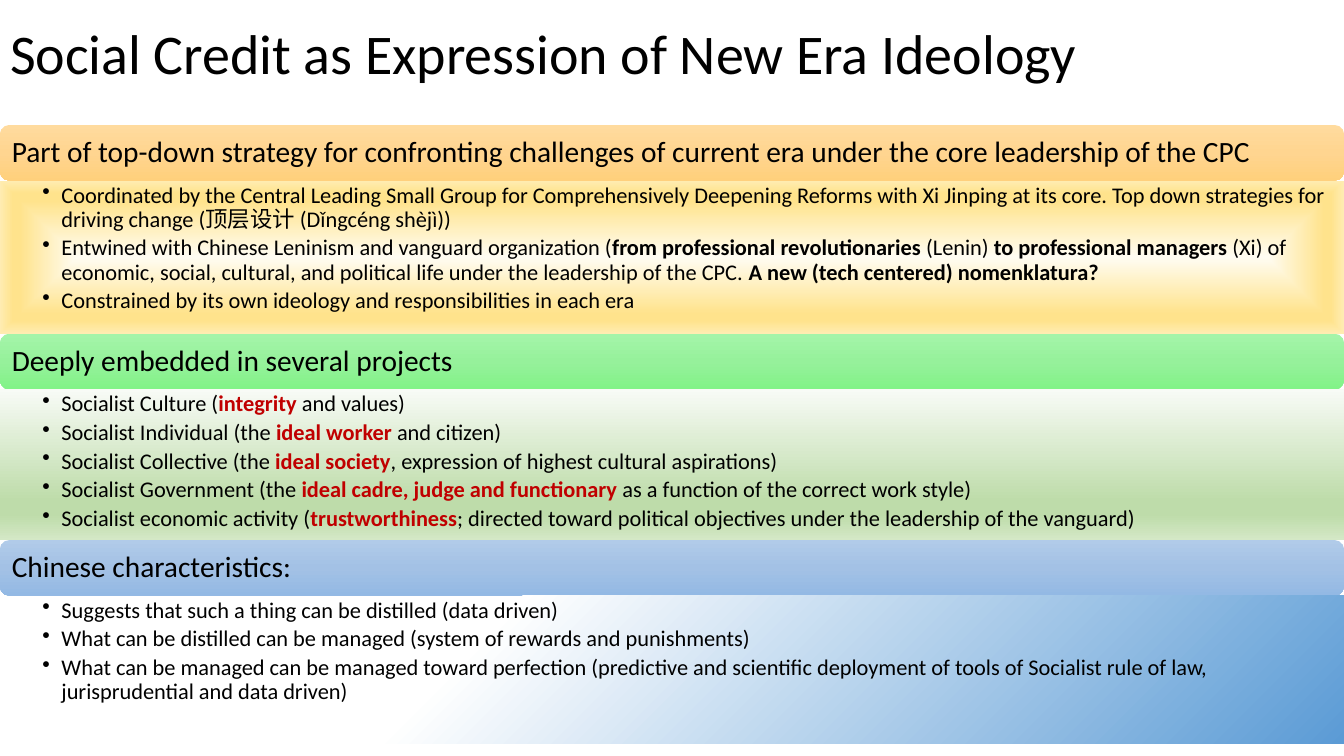
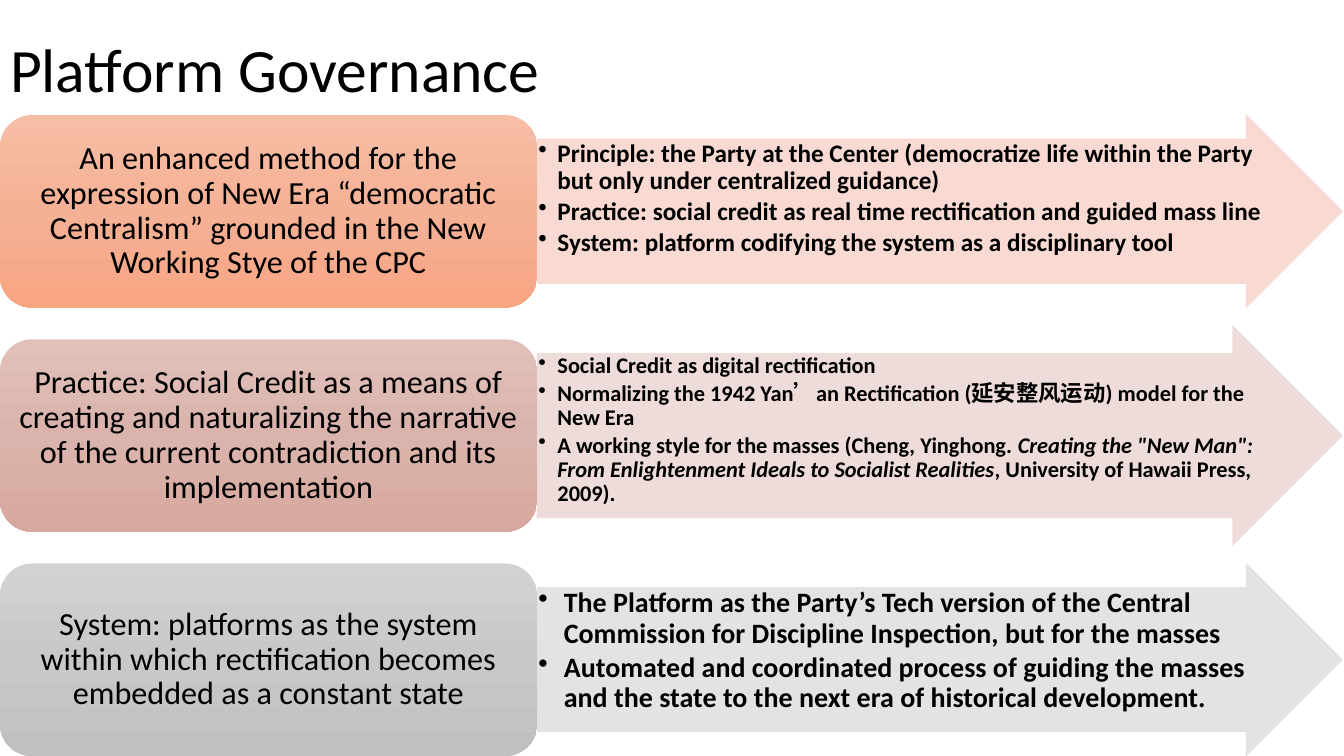
from dataclasses import dataclass

import pptx
import pptx.dml.color
import pptx.enum.shapes
import pptx.enum.text
import pptx.oxml
import pptx.oxml.ns
import pptx.util
from pptx.util import Cm

SHAPES = pptx.enum.shapes.MSO_SHAPE
ALIGN = pptx.enum.text.PP_ALIGN
ANCHOR = pptx.enum.text.MSO_ANCHOR


@dataclass(frozen=True)
class Theme:
    font: str = "Calibri"
    ink: str = "000000"
    accent: str = "C00000"
    section_title: int = 40
    arrow_title: int = 44
    heading: int = 21
    label: int = 23
    detail: int = 16
    line_spacing: float = 0.9
    arrow_opacity: int = 90


THEME = Theme()
SLIDE_WIDTH, SLIDE_HEIGHT = 33.87, 19.05

SECTION_TITLE = "Social Credit as Expression of New Era Ideology"
SECTIONS = [
    {
        "heading": "Part of top-down strategy for confronting challenges of current era "
                   "under the core leadership of the CPC",
        "heading_stops": [(0, "FFDB9E"), (50, "FFD590"), (100, "FFD07C")],
        "stops": [(0, "FFFCF2"), (74, "FFE38C"), (83, "FFE38C"), (100, "FFECB2")],
        "angle": None,
        "height": 3.86,
        "bullets": [
            [("Coordinated by the Central Leading Small Group for Comprehensively Deepening "
              "Reforms with Xi Jinping at its core. Top down strategies for driving change "
              "(顶层设计 (Dǐngcéng shèjì))", "")],
            [("Entwined with Chinese Leninism and vanguard organization (", ""),
             ("from professional revolutionaries ", "bold"),
             ("(Lenin) ", ""),
             ("to professional managers ", "bold"),
             ("(Xi) of economic, social, cultural, and political life under the "
              "leadership of the CPC. ", ""),
             ("A new (tech centered) nomenklatura?", "bold")],
            [("Constrained by its own ideology and responsibilities in each era", "")],
        ],
    },
    {
        "heading": "Deeply embedded in several projects",
        "heading_stops": [(0, "A4F4A9"), (50, "96F19B"), (100, "82F388")],
        "stops": [(0, "F8FBF6"), (74, "BEDCAA"), (83, "BEDCAA"), (100, "D4E8C6")],
        "angle": 90,
        "height": 3.8,
        "bullets": [
            [("Socialist Culture (", ""), ("integrity", "bold accent"), (" and values)", "")],
            [("Socialist Individual (the ", ""), ("ideal worker", "bold accent"),
             (" and citizen)", "")],
            [("Socialist Collective (the ", ""), ("ideal society", "bold accent"),
             (", expression of highest cultural aspirations)", "")],
            [("Socialist Government (the ", ""),
             ("ideal cadre, judge and functionary ", "bold accent"),
             ("as a function of the correct work style)", "")],
            [("Socialist economic activity (", ""), ("trustworthiness", "bold accent"),
             ("; directed toward political objectives under the leadership of the vanguard)", "")],
        ],
    },
    {
        "heading": "Chinese characteristics:",
        "heading_stops": [(0, "B1CBE9"), (50, "A3C1E5"), (100, "93B9E4")],
        "stops": [(0, "FFFFFF"), (35, "FFFFFF"), (100, "5B9BD5")],
        "angle": 45,
        "height": 3.73,
        "bullets": [
            [("Suggests that such a thing can be distilled (data driven)", "")],
            [("What can be distilled can be managed (system of rewards and punishments)", "")],
            [("What can be managed can be managed toward perfection (predictive and scientific "
              "deployment of tools of Socialist rule of law, jurisprudential and data driven)", "")],
        ],
    },
]

ARROW_TITLE = "Platform Governance"
ARROWS = [
    {
        "label": "An enhanced method for the expression of New Era “democratic Centralism” "
                 "grounded in the New Working Stye of the CPC",
        "stops": [(0, "F7BDA5"), (50, "F5B196"), (100, "F8A582")],
        "color": "F8D7CE", "height": 4.85, "size": 18, "indent": 0.48,
        "bullets": [
            [("Principle: the Party at the Center (democratize life within the Party "
              "but only under centralized guidance)", "bold")],
            [("Practice: social credit as real time rectification and guided mass line", "bold")],
            [("System: platform codifying the system as a disciplinary tool", "bold")],
        ],
    },
    {
        "label": "Practice: Social Credit as a means of creating and naturalizing the "
                 "narrative of the current contradiction and its implementation",
        "stops": [(0, "E0C0B9"), (50, "DAB4AC"), (100, "D7A89E")],
        "color": "EDD9D7", "height": 5.52, "size": 16, "indent": 0.48,
        "bullets": [
            [("Social Credit as digital rectification", "bold")],
            [("Normalizing the 1942 Yan’an Rectification (延安整风运动) model for the New Era",
              "bold")],
            [("A working style for the masses (Cheng, Yinghong. ", "bold"),
             ("Creating the \"New Man\": From Enlightenment Ideals to Socialist Realities",
              "bold italic"),
             (", University of Hawaii Press, 2009).", "bold")],
        ],
    },
    {
        "label": "System: platforms as the system within which rectification becomes "
                 "embedded as a constant state",
        "stops": [(0, "D2D2D2"), (50, "C8C8C8"), (100, "C0C0C0")],
        "color": "E1E1E1", "height": 4.85, "size": 20, "indent": 0.64,
        "bullets": [
            [("The Platform as the Party’s Tech version of the Central Commission for "
              "Discipline Inspection, but for the masses", "bold")],
            [("Automated and coordinated process of guiding the masses and the state to "
              "the next era of historical development.", "bold")],
        ],
    },
]


def rgb(value):
    return pptx.dml.color.RGBColor.from_string(value)


def format_run(run, size, style=""):
    run.font.name = THEME.font
    run.font.size = pptx.util.Pt(size)
    run.font.bold = "bold" in style
    run.font.italic = "italic" in style
    run.font.color.rgb = rgb(THEME.accent if "accent" in style else THEME.ink)


def fill_gradient(shape, stops, angle):
    stop_xml = "".join(
        f'<a:gs pos="{position * 1000}"><a:srgbClr val="{color}"/></a:gs>'
        for position, color in stops)
    if angle is None:
        direction = ('<a:path path="shape">'
                     '<a:fillToRect l="50000" t="50000" r="50000" b="50000"/></a:path>')
    else:
        direction = f'<a:lin ang="{angle * 60000}" scaled="0"/>'
    gradient = pptx.oxml.parse_xml(
        f'<a:gradFill {pptx.oxml.ns.nsdecls("a")} rotWithShape="1">'
        f'<a:gsLst>{stop_xml}</a:gsLst>{direction}</a:gradFill>')
    shape.fill.background()
    properties = shape.fill._xPr
    properties.replace(properties.find(pptx.oxml.ns.qn("a:noFill")), gradient)


def add_box(slide, kind, left, top, width, height, insets, anchor):
    shape = slide.shapes.add_shape(kind, Cm(left), Cm(top), Cm(width), Cm(height))
    shape.shadow.inherit = False
    shape.line.fill.background()
    frame = shape.text_frame
    frame.word_wrap = True
    frame.vertical_anchor = anchor
    frame.margin_left, frame.margin_top, frame.margin_right, frame.margin_bottom = map(Cm, insets)
    return shape


def write_line(frame, text, size, alignment=ALIGN.LEFT):
    frame.text = text
    paragraph = frame.paragraphs[0]
    paragraph.alignment = alignment
    paragraph.line_spacing = THEME.line_spacing
    format_run(paragraph.runs[0], size)


def write_bullets(frame, bullets, size, indent, space_after):
    for index, pieces in enumerate(bullets):
        paragraph = frame.add_paragraph() if index else frame.paragraphs[0]
        properties = paragraph._p.get_or_add_pPr()
        properties.set("marL", str(Cm(indent)))
        properties.set("indent", str(-Cm(indent)))
        properties.append(pptx.oxml.parse_xml(
            f'<a:buChar {pptx.oxml.ns.nsdecls("a")} char="•"/>'))
        paragraph.alignment = ALIGN.LEFT
        paragraph.line_spacing = THEME.line_spacing
        paragraph.space_after = pptx.util.Pt(size * space_after)
        for text, style in pieces:
            run = paragraph.add_run()
            run.text = text
            format_run(run, size, style)


def add_titled_slide(presentation, text, size, height):
    slide = presentation.slides.add_slide(presentation.slide_layouts[5])
    title = slide.shapes.title
    title.left, title.top, title.width, title.height = Cm(0), Cm(0), Cm(29.21), Cm(height)
    title.text_frame.auto_size = pptx.enum.text.MSO_AUTO_SIZE.NONE
    title.text_frame.vertical_anchor = ANCHOR.MIDDLE
    write_line(title.text_frame, text, size)
    return slide


def build_sections(presentation):
    slide = add_titled_slide(presentation, SECTION_TITLE, THEME.section_title, 2.84)
    top, heading_height = 3.15, 1.4
    for section in SECTIONS:
        heading = add_box(slide, SHAPES.ROUNDED_RECTANGLE, 0, top, SLIDE_WIDTH, heading_height,
                          (0.23, 0.23, 0.23, 0.23), ANCHOR.MIDDLE)
        fill_gradient(heading, section["heading_stops"], 90)
        write_line(heading.text_frame, section["heading"], THEME.heading)
        top += heading_height
        panel = add_box(slide, SHAPES.RECTANGLE, 0, top, SLIDE_WIDTH, section["height"],
                        (1.07, 0.08, 0.41, 0.08), ANCHOR.TOP)
        fill_gradient(panel, section["stops"], section["angle"])
        write_bullets(panel.text_frame, section["bullets"], THEME.detail, 0.48, 0.2)
        top += section["height"]


def color_arrow(arrow, color):
    arrow.line.width = pptx.util.Pt(0.5)
    for fill in (arrow.fill, arrow.line.fill):
        fill.solid()
        fill.fore_color.rgb = rgb(color)
    for element in arrow._element.spPr.iter(pptx.oxml.ns.qn("a:srgbClr")):
        element.append(pptx.oxml.parse_xml(
            f'<a:alpha {pptx.oxml.ns.nsdecls("a")} val="{THEME.arrow_opacity * 1000}"/>'))


def build_arrows(presentation):
    slide = add_titled_slide(presentation, ARROW_TITLE, THEME.arrow_title, 3.68)
    first_top, label_width, label_height = 2.9, 13.54, 4.85
    pitch = (SLIDE_HEIGHT - first_top - label_height) / (len(ARROWS) - 1)
    for index, row in enumerate(ARROWS):
        top = first_top + index * pitch
        arrow_top = top + (label_height - row["height"]) / 2
        arrow = add_box(slide, SHAPES.RIGHT_ARROW, label_width, arrow_top, 20.29, row["height"],
                        (0.03, 0.03, 0.03, 0.03), ANCHOR.TOP)
        arrow.adjustments[0], arrow.adjustments[1] = 0.75, 0.5
        color_arrow(arrow, row["color"])
        write_bullets(arrow.text_frame, row["bullets"], row["size"], row["indent"], 0.15)
        label = add_box(slide, SHAPES.ROUNDED_RECTANGLE, 0, top, label_width, label_height,
                        (0.25, 0.13, 0.25, 0.13), ANCHOR.MIDDLE)
        fill_gradient(label, row["stops"], 90)
        write_line(label.text_frame, row["label"], THEME.label, ALIGN.CENTER)


def main():
    presentation = pptx.Presentation()
    presentation.slide_width, presentation.slide_height = Cm(SLIDE_WIDTH), Cm(SLIDE_HEIGHT)
    build_sections(presentation)
    build_arrows(presentation)
    presentation.save("out.pptx")


if __name__ == "__main__":
    main()
